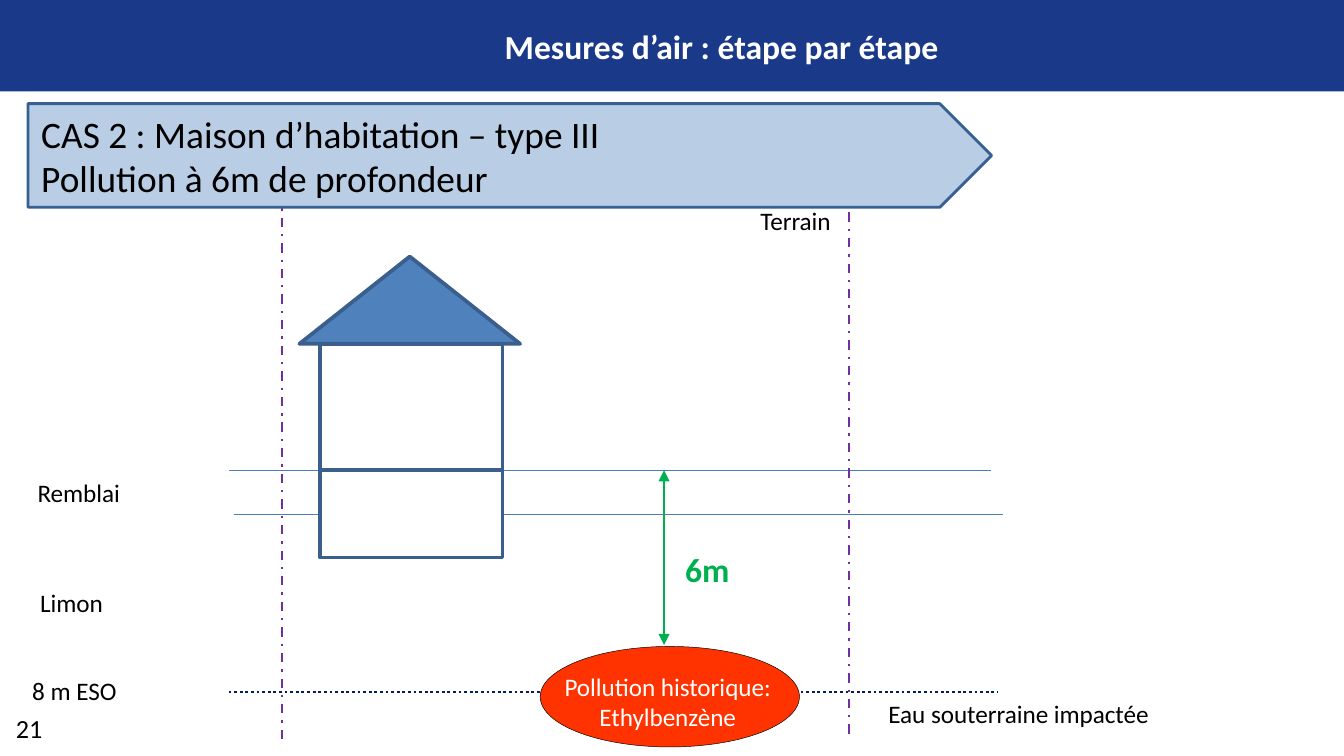
from dataclasses import dataclass
from typing import Optional

from lxml.etree import SubElement
from pptx import Presentation
from pptx.dml.color import RGBColor
from pptx.enum.dml import MSO_LINE
from pptx.enum.shapes import MSO_CONNECTOR, MSO_SHAPE
from pptx.enum.text import MSO_ANCHOR, PP_ALIGN
from pptx.oxml.ns import qn
from pptx.util import Cm, Pt


@dataclass(frozen=True)
class Theme:
    font: str = "Calibri"
    header: str = "1A3989"
    white: str = "FFFFFF"
    black: str = "000000"
    layer: str = "4B7EBC"
    wall: str = "3A5F8C"
    roof: str = "4F81BD"
    boundary: str = "7030A0"
    water: str = "002060"
    banner: str = "B9CDE5"
    banner_edge: str = "376092"
    pollution: str = "FF3300"
    depth: str = "00B050"
    label_size: float = 13.5
    number_size: float = 14
    title_size: float = 18
    banner_size: float = 20


THEME = Theme()


@dataclass(frozen=True)
class Block:
    """Preset shape, lengths in centimetres."""
    kind: MSO_SHAPE
    left: float
    top: float
    width: float
    height: float
    fill: Optional[str] = None
    edge: Optional[str] = None
    weight: float = 2


@dataclass(frozen=True)
class Rule:
    """Straight line, lengths in centimetres."""
    x1: float
    y1: float
    x2: float
    y2: float
    color: str
    weight: float = 0.75
    dash: Optional[MSO_LINE] = None
    arrows: bool = False


@dataclass(frozen=True)
class Label:
    """Text box, one paragraph per line, lengths in centimetres."""
    lines: tuple[str, ...]
    left: float
    top: float
    width: float
    height: float = 0.84
    size: float = THEME.label_size
    color: str = THEME.black
    bold: bool = False
    align: PP_ALIGN = PP_ALIGN.LEFT
    wrap: bool = True


def write_lines(frame, lines: tuple[str, ...], size: float, color: str,
                bold: bool = False, align: PP_ALIGN = PP_ALIGN.LEFT) -> None:
    for index, line in enumerate(lines):
        paragraph = frame.add_paragraph() if index else frame.paragraphs[0]
        paragraph.alignment = align
        run = paragraph.add_run()
        run.text = line
        run.font.name = THEME.font
        run.font.size = Pt(size)
        run.font.bold = bold
        run.font.color.rgb = RGBColor.from_string(color)


def draw_block(slide, block: Block):
    shape = slide.shapes.add_shape(block.kind, Cm(block.left), Cm(block.top),
                                   Cm(block.width), Cm(block.height))
    shape.shadow.inherit = False
    if block.fill:
        shape.fill.solid()
        shape.fill.fore_color.rgb = RGBColor.from_string(block.fill)
    else:
        shape.fill.background()
    if block.edge:
        shape.line.color.rgb = RGBColor.from_string(block.edge)
        shape.line.width = Pt(block.weight)
    else:
        shape.line.fill.background()
    return shape


def draw_rule(slide, rule: Rule) -> None:
    connector = slide.shapes.add_connector(
        MSO_CONNECTOR.STRAIGHT, Cm(rule.x1), Cm(rule.y1), Cm(rule.x2), Cm(rule.y2))
    connector.line.color.rgb = RGBColor.from_string(rule.color)
    connector.line.width = Pt(rule.weight)
    if rule.dash:
        connector.line.dash_style = rule.dash
    properties = connector._element.spPr
    if rule.arrows:
        for end in ("a:headEnd", "a:tailEnd"):
            SubElement(properties.find(qn("a:ln")), qn(end), type="triangle")
    SubElement(properties, qn("a:effectLst"))


def draw_label(slide, label: Label) -> None:
    box = slide.shapes.add_textbox(Cm(label.left), Cm(label.top),
                                   Cm(label.width), Cm(label.height))
    box.text_frame.word_wrap = label.wrap
    write_lines(box.text_frame, label.lines, label.size, label.color,
                label.bold, label.align)


# Shared positions of the cross-section
GROUND = 8.89
FILL_BASE = 9.73
WATER_TABLE = 13.08
LEFT_LIMIT, RIGHT_LIMIT = 5.33, 16.05
HOUSE_LEFT, HOUSE_WIDTH = 6.05, 3.45
ROOF_BASE = 6.5

HEADER = Block(MSO_SHAPE.RECTANGLE, 0, 0, 25.4, 1.73, THEME.header)
BANNER = Block(MSO_SHAPE.PENTAGON, 0.53, 1.96, 18.21, 1.96,
               THEME.banner, THEME.banner_edge, 1.5)
POLLUTION = Block(MSO_SHAPE.OVAL, 10.21, 12.22, 4.9, 1.9,
                  THEME.pollution, THEME.black, 0.25)

RULES = (
    Rule(4.32, GROUND, 18.72, GROUND, THEME.layer),
    Rule(4.42, FILL_BASE, 18.95, FILL_BASE, THEME.layer),
    Rule(4.32, WATER_TABLE, 18.87, WATER_TABLE, THEME.water, 1.5, MSO_LINE.ROUND_DOT),
    Rule(LEFT_LIMIT, 3.63, LEFT_LIMIT, 14, THEME.boundary, 1.25, MSO_LINE.DASH_DOT),
    Rule(RIGHT_LIMIT, 3.53, RIGHT_LIMIT, 13.89, THEME.boundary, 1.25, MSO_LINE.DASH_DOT),
    Rule(12.55, GROUND, 12.55, 12.19, THEME.depth, arrows=True),
)

HOUSE = (
    Block(MSO_SHAPE.RECTANGLE, HOUSE_LEFT, ROOF_BASE, HOUSE_WIDTH,
          GROUND - ROOF_BASE, edge=THEME.wall),
    Block(MSO_SHAPE.ISOSCELES_TRIANGLE, 5.66, 4.85, 4.17, ROOF_BASE - 4.85,
          THEME.roof, THEME.wall),
    Block(MSO_SHAPE.RECTANGLE, HOUSE_LEFT, GROUND, HOUSE_WIDTH, 1.65,
          THEME.white, THEME.wall),
)

LABELS = (
    Label(("Mesures d’air : étape par étape",), 2.21, 0.36, 22.86, 1.02,
          THEME.title_size, THEME.white, True, PP_ALIGN.CENTER),
    Label(("21",), 0.05, 13.34, 1.35, 0.86, THEME.number_size, wrap=False),
    Label(("Terrain",), 14.12, 3.76, 2.69),
    Label(("Remblai",), 0.46, GROUND, 2.69),
    Label(("Limon",), 0.51, 10.97, 4.67),
    Label(("8 m ESO",), 0.36, 12.65, 2.69),
    Label(("Pollution historique:", "Ethylbenzène"), 10.36, 12.57, 4.52, 1.42,
          color=THEME.white, align=PP_ALIGN.CENTER),
    Label(("Eau souterraine impactée",), 16.54, WATER_TABLE, 7.16),
    Label(("6m",), 12.7, 10.26, 2.06, 1.02, THEME.title_size, THEME.depth, True),
)


def main() -> None:
    presentation = Presentation()
    presentation.slide_width = Cm(25.4)
    presentation.slide_height = Cm(14.29)
    slide = presentation.slides.add_slide(presentation.slide_layouts[6])

    # Header band, then ground layers, site limits and depth arrow
    draw_block(slide, HEADER)
    for rule in RULES:
        draw_rule(slide, rule)

    # House and pollution source
    for block in (*HOUSE, POLLUTION):
        draw_block(slide, block)

    # Case banner
    banner = draw_block(slide, BANNER)
    banner.text_frame.word_wrap = True
    banner.text_frame.vertical_anchor = MSO_ANCHOR.MIDDLE
    write_lines(banner.text_frame,
                ("CAS 2 : Maison d’habitation – type III", "Pollution à 6m de profondeur"),
                THEME.banner_size, THEME.black)

    # Texts
    for label in LABELS:
        draw_label(slide, label)

    presentation.save("out.pptx")


if __name__ == "__main__":
    main()
